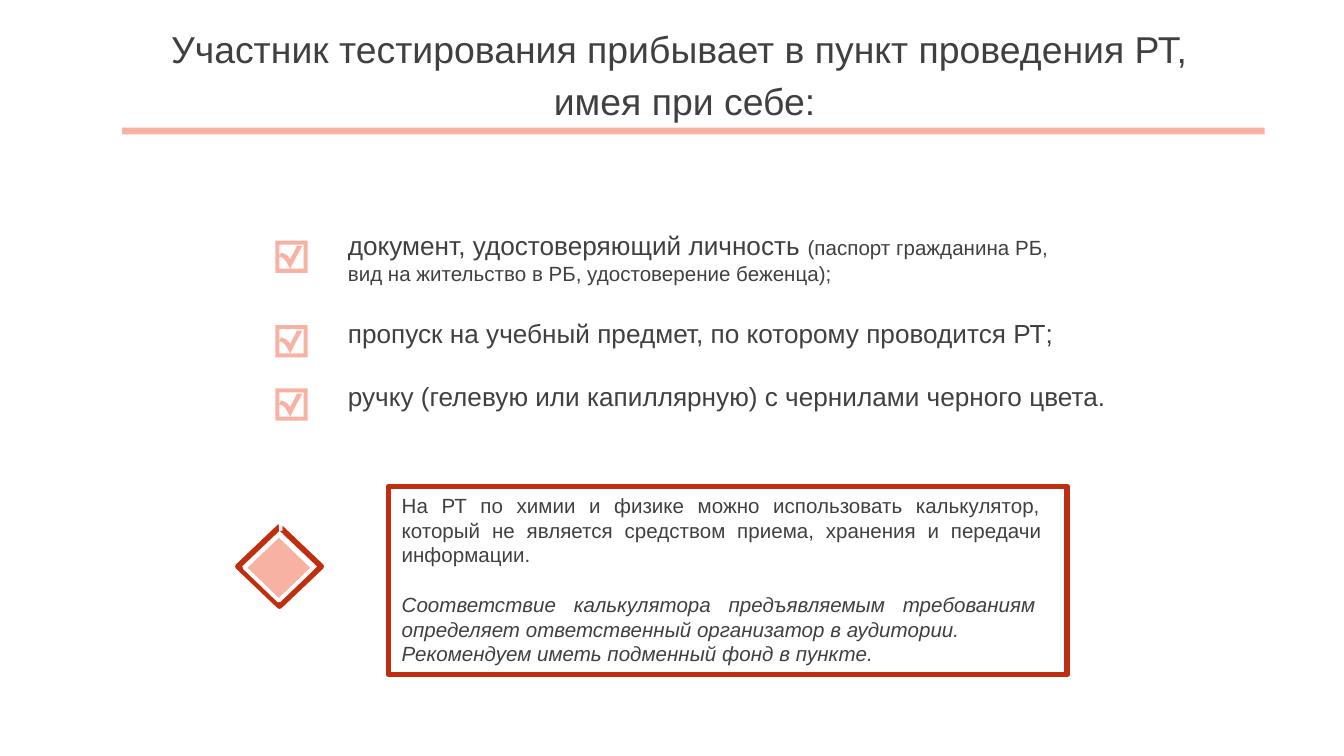
import pptx
import pptx.dml.color
import pptx.enum.shapes
import pptx.enum.text
import pptx.util
from lxml import etree

Inches, Pt = pptx.util.Inches, pptx.util.Pt
SHAPE = pptx.enum.shapes.MSO_SHAPE
ALIGN = pptx.enum.text.PP_ALIGN
ANCHOR = pptx.enum.text.MSO_ANCHOR
COLORS = {"text": "404040", "pink": "F8B2A3", "red": "BF2E0F", "white": "FFFFFF"}
FONT = "Arial"


def rgb(name):
    return pptx.dml.color.RGBColor.from_string(COLORS[name])


def paint(shape, fill=None, line=None, width=0):
    shape.shadow.inherit = False
    if fill:
        shape.fill.solid()
        shape.fill.fore_color.rgb = rgb(fill)
    else:
        shape.fill.background()
    if line:
        shape.line.color.rgb = rgb(line)
        shape.line.width = Pt(width)
        outline = shape.line._get_or_add_ln()
        etree.SubElement(outline, pptx.oxml.ns.qn("a:round"))
    else:
        shape.line.fill.background()


def add_box(shapes, kind, box, **look):
    shape = shapes.add_shape(kind, *map(Inches, box))
    paint(shape, **look)
    return shape


def write(frame, paragraphs, size, align, anchor=ANCHOR.TOP, color="text"):
    """Fill a frame from (text, space before in points, italic) rows."""
    frame.word_wrap = True
    frame.vertical_anchor = anchor
    for number, (text, gap, italic) in enumerate(paragraphs):
        paragraph = frame.add_paragraph() if number else frame.paragraphs[0]
        paragraph.text = text
        paragraph.alignment = align
        if gap:
            paragraph.space_before = Pt(gap)
        paragraph.font.name = FONT
        paragraph.font.size = Pt(size)
        paragraph.font.italic = italic
        paragraph.font.color.rgb = rgb(color)


def add_heading(slide, left, top, width, height):
    heading = slide.shapes.add_textbox(*map(Inches, (left, top, width, height)))
    lines = [("Участник тестирования прибывает в пункт проведения РТ, ", 0, False),
             ("имея при себе:", 4, False)]
    write(heading.text_frame, lines, 20, ALIGN.CENTER, ANCHOR.MIDDLE)
    add_box(slide.shapes, SHAPE.RECTANGLE, (left + 0.48, top + 0.71, 8.5, 0.05), fill="pink")


def curve(start, control1, control2, end, steps=6):
    """Points along a cubic Bezier curve, without its start."""
    points = []
    for step in range(1, steps + 1):
        t = step / steps
        u = 1 - t
        points.append(tuple(
            u**3 * a + 3 * u * u * t * b + 3 * u * t * t * c + t**3 * d
            for a, b, c, d in zip(start, control1, control2, end)))
    return points


def add_checkbox(slide, left, top, size=240):
    """Draw a ticked box; its outline is in thousandths of an inch."""
    edge, inner = 30, size - 30
    hole = [
        (edge, edge), (edge, inner), (110, inner),
        *curve((110, inner), (90, 180), (70, 120), (edge, 120)),
        (40, 90),
        *curve((40, 90), (80, 100), (90, 110), (110, 140)),
        *curve((110, 140), (130, 100), (140, 80), (160, 40)),
        (200, 40),
        *curve((200, 40), (170, 90), (140, 150), (110, inner)),
        (inner, inner), (inner, edge),
    ]
    frame = [(0, 0), (size, 0), (size, size), (0, size)]
    builder = slide.shapes.build_freeform(*frame[0], scale=Inches(1) / 1000)
    builder.add_line_segments(frame[1:], close=True)
    builder.move_to(*hole[0])
    builder.add_line_segments(hole[1:], close=True)
    paint(builder.convert_to_shape(Inches(left), Inches(top)), fill="pink")


def add_checklist(slide, left, top, width, height):
    items = slide.shapes.add_textbox(
        *map(Inches, (left + 0.44, top, width - 0.44, height)))
    lines = [("документ, удостоверяющий личность ", 0, False),
             ("вид на жительство в РБ, удостоверение беженца);", 0, False),
             ("пропуск на учебный предмет, по которому проводится РТ;", 17, False),
             ("ручку (гелевую или капиллярную) с чернилами черного цвета.", 17, False)]
    write(items.text_frame, lines, 14, ALIGN.JUSTIFY)
    document, details = items.text_frame.paragraphs[:2]
    details.font.size = Pt(11)
    examples = document.add_run()
    examples.text = "(паспорт гражданина РБ, "
    examples.font.size = Pt(11)
    for offset in (0.13, 0.76, 1.23):
        add_checkbox(slide, left, top + offset)


def add_calculator_note(slide, *box):
    note = add_box(slide.shapes, SHAPE.RECTANGLE, box, line="red", width=3)
    lines = [("На РТ по химии и физике можно использовать калькулятор, \v"
              "который не является средством приема, хранения и передачи \v"
              "информации.", 0, False),
             ("Соответствие калькулятора предъявляемым требованиям \v"
              "определяет ответственный организатор в аудитории.", 13.4, True),
             ("Рекомендуем иметь подменный фонд в пункте.", 0, True)]
    write(note.text_frame, lines, 11, ALIGN.JUSTIFY)


def add_attention_sign(slide, left, top, width, height):
    sign = slide.shapes.add_group_shape().shapes
    add_box(sign, SHAPE.DIAMOND, (left, top, width, height),
            fill="white", line="red", width=3)
    add_box(sign, SHAPE.DIAMOND, (left + 0.05, top + 0.06, width - 0.11, height - 0.1),
            fill="pink", line="white", width=2)
    mark = sign.add_textbox(*map(Inches, (left + 0.2, top - 0.14, 0.24, 0.26)))
    frame = mark.text_frame
    frame.margin_left = frame.margin_right = frame.margin_top = frame.margin_bottom = 0
    write(frame, [("!", 0, False)], 16, ALIGN.CENTER, color="white")
    frame.paragraphs[0].font.bold = True


def main():
    deck = pptx.Presentation()
    deck.slide_width = Inches(10)
    deck.slide_height = deck.slide_width * 9 // 16
    slide = deck.slides.add_slide(deck.slide_layouts[6])
    add_heading(slide, 0.43, 0.24, 9.33, 0.63)
    add_checklist(slide, 2.05, 1.66, 6.34, 1.46)
    add_calculator_note(slide, 2.89, 3.62, 5.05, 1.4)
    add_attention_sign(slide, 1.77, 3.92, 0.62, 0.59)
    deck.save("out.pptx")


if __name__ == "__main__":
    main()
